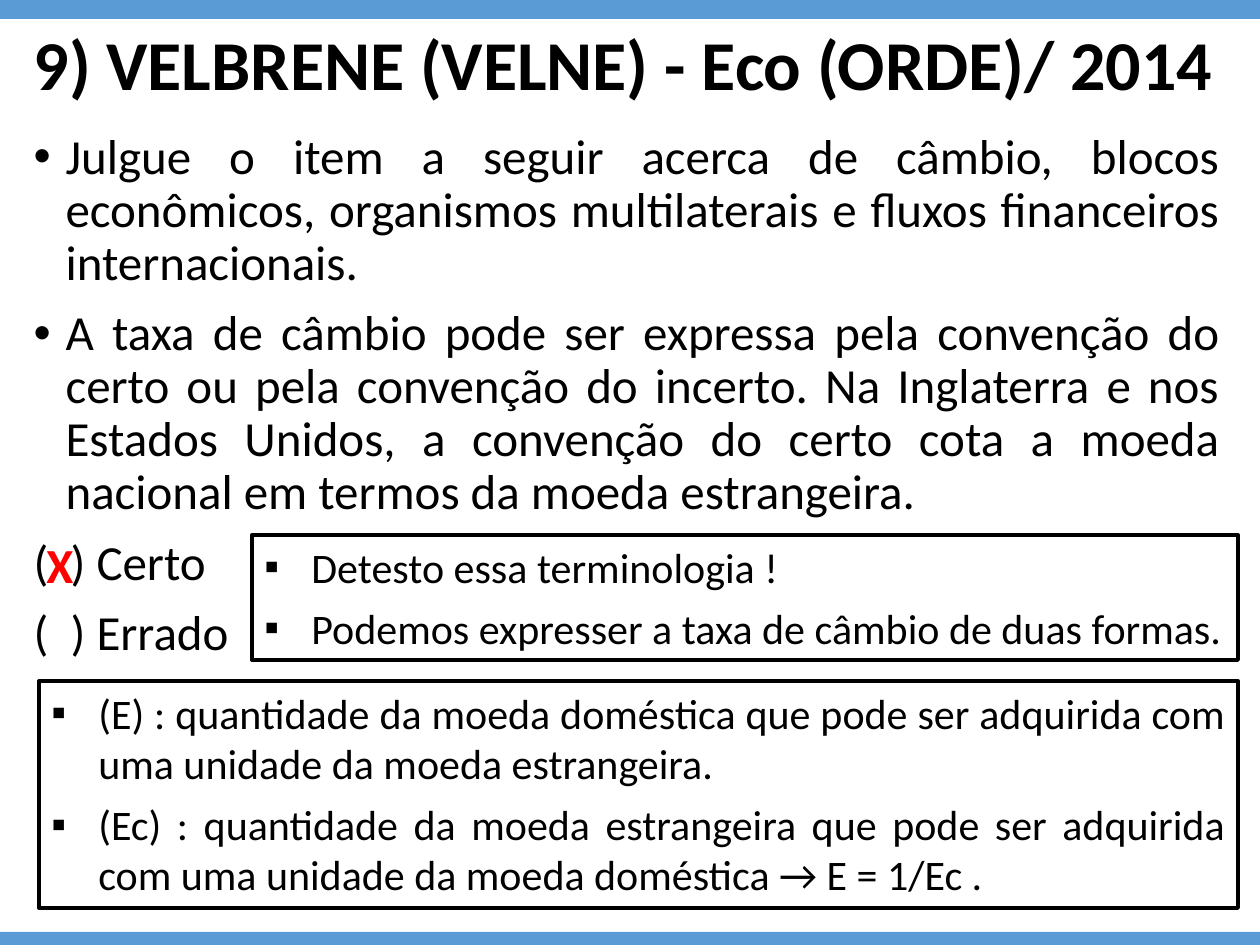
"""Build the exam question slide on exchange rate conventions."""
from lxml.etree import SubElement
from pptx import Presentation
from pptx.dml.color import RGBColor
from pptx.enum.shapes import MSO_SHAPE
from pptx.enum.text import MSO_ANCHOR, MSO_AUTO_SIZE, PP_ALIGN
from pptx.oxml.ns import qn
from pptx.util import Pt

PX = 914400 / 126
BLACK = RGBColor(0, 0, 0)
RED = RGBColor(255, 0, 0)
BLUE = RGBColor(0x5B, 0x9B, 0xD5)


def place(*sides):
    return [round(side * PX) for side in sides]


def write(frame, texts, size, color=BLACK, bold=False, lead=1.0, gap=0, mark=None, dent=0):
    frame.word_wrap = True
    frame.auto_size = MSO_AUTO_SIZE.NONE
    for num, text in enumerate(texts):
        para = frame.paragraphs[0] if num == 0 else frame.add_paragraph()
        para.alignment = PP_ALIGN.JUSTIFY
        para.line_spacing = lead
        para.space_before = Pt(gap)
        props = para._p.get_or_add_pPr()
        item = mark and not text.startswith("(  )")
        inset = round(dent * PX) if item else 0
        props.set("marL", str(inset))
        props.set("indent", str(-inset))
        if item:
            SubElement(props, qn("a:buFont"), typeface="Arial")
            SubElement(props, qn("a:buChar"), char=mark)
        else:
            SubElement(props, qn("a:buNone"))
        for row, part in enumerate(text.split("\n")):
            if row:
                para.add_line_break()
            run = para.add_run()
            run.text = part
            run.font.name = "Calibri"
            run.font.size = Pt(size)
            run.font.bold = bold
            run.font.color.rgb = color


deck = Presentation()
deck.slide_width, deck.slide_height = place(1260, 945)
slide = deck.slides.add_slide(deck.slide_layouts[1])
shapes = slide.shapes
title, body = shapes.title, slide.placeholders[1]

for top, height in [(0, 19), (932, 14)]:
    bar = shapes.add_shape(MSO_SHAPE.RECTANGLE, *place(0, top, 1260, height))
    bar.shadow.inherit = False
    bar.fill.solid()
    bar.fill.fore_color.rgb = BLUE
    bar.line.fill.background()

title.left, title.top, title.width, title.height = place(21, -24, 1211, 183)
title.text_frame.vertical_anchor = MSO_ANCHOR.MIDDLE
write(title.text_frame, ["9) VELBRENE (VELNE) - Eco (ORDE)/ 2014"], 40, bold=True, lead=0.9)

body.left, body.top, body.width, body.height = place(21, 126, 1211, 600)
write(body.text_frame, [
    "Julgue o item a seguir acerca de câmbio, blocos econômicos, organismos "
    "multilaterais e fluxos financeiros internacionais.",
    "A taxa de câmbio pode ser expressa pela convenção do certo ou pela convenção "
    "do incerto. Na Inglaterra e nos Estados Unidos, a convenção do certo cota a moeda\n"
    "nacional em termos da moeda estrangeira.",
    "(  ) Certo",
    "(  ) Errado",
], 28, lead=0.9, gap=10, mark="•", dent=32)

cross = shapes.add_textbox(*place(34, 528, 48, 63))
write(cross.text_frame, ["X"], 28, RED, bold=True)

notes = [
    ((252, 535, 986, 125), [
        "Detesto essa terminologia !",
        "Podemos expresser a taxa de câmbio de duas formas.",
    ]),
    ((39, 681, 1199, 227), [
        "(E) : quantidade da moeda doméstica que pode ser adquirida com uma unidade "
        "da moeda estrangeira.",
        "(Ec) : quantidade da moeda estrangeira que pode ser adquirida com uma unidade "
        "da moeda doméstica → E = 1/Ec .",
    ]),
]
for sides, texts in notes:
    box = shapes.add_shape(MSO_SHAPE.RECTANGLE, *place(*sides))
    box.shadow.inherit = False
    box.fill.background()
    box.line.color.rgb = BLACK
    box.line.width = Pt(2.25)
    box.text_frame.vertical_anchor = MSO_ANCHOR.TOP
    write(box.text_frame, texts, 24, gap=6, mark="▪", dent=47)

deck.save("out.pptx")
